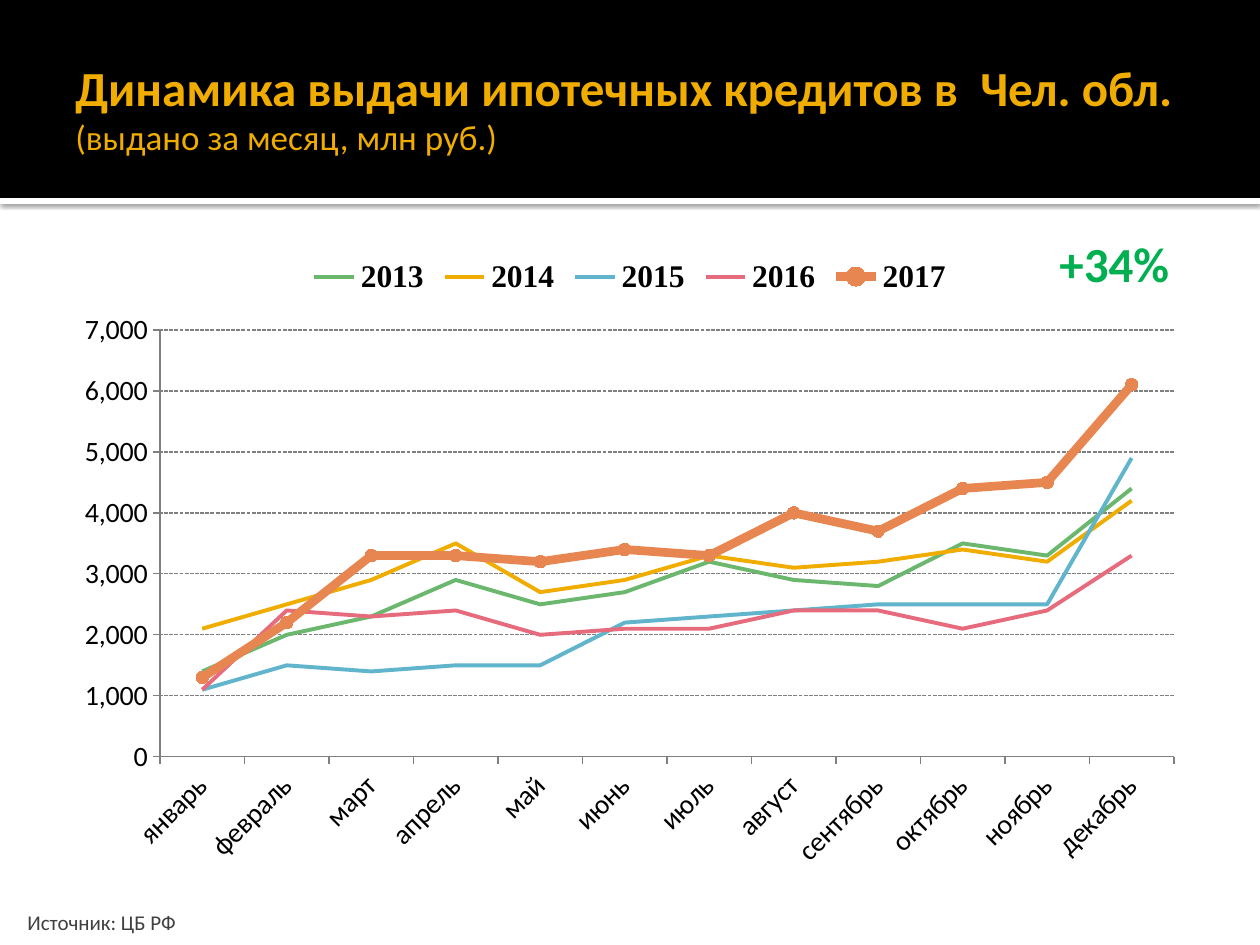
from lxml import etree
from pptx import Presentation
from pptx.chart.data import CategoryChartData
from pptx.dml.color import RGBColor
from pptx.enum.chart import XL_CHART_TYPE, XL_LEGEND_POSITION, XL_MARKER_STYLE, XL_TICK_MARK
from pptx.enum.dml import MSO_LINE
from pptx.enum.shapes import MSO_SHAPE
from pptx.enum.text import MSO_ANCHOR
from pptx.oxml import parse_xml
from pptx.oxml.ns import nsdecls, qn
from pptx.util import Emu, Pt

# Content
TITLE = "Динамика выдачи ипотечных кредитов в  Чел. обл."
SUBTITLE = "(выдано за месяц, млн руб.)"
SOURCE = "Источник: ЦБ РФ"
GROWTH = "+34%"
MONTHS = ["январь", "февраль", "март", "апрель", "май", "июнь", "июль",
          "август", "сентябрь", "октябрь", "ноябрь", "декабрь"]
LOANS = {
    "2013": [1400, 2000, 2300, 2900, 2500, 2700, 3200, 2900, 2800, 3500, 3300, 4400],
    "2014": [2100, 2500, 2900, 3500, 2700, 2900, 3300, 3100, 3200, 3400, 3200, 4200],
    "2015": [1100, 1500, 1400, 1500, 1500, 2200, 2300, 2400, 2500, 2500, 2500, 4900],
    "2016": [1100, 2400, 2300, 2400, 2000, 2100, 2100, 2400, 2400, 2100, 2400, 3300],
    "2017": [1300, 2200, 3300, 3300, 3200, 3400, 3300, 4000, 3700, 4400, 4500, 6100],
}
HIGHLIGHT = "2017"
COLORS = {
    "2013": "6BB76D", "2014": "F0AD00", "2015": "60B5CC", "2016": "E66C7D",
    "2017": "E88651", "title": "F0AD00", "source": "404040", "growth": "00B050",
    "black": "000000", "white": "FFFFFF", "axis": "808080",
}
FONT = "Calibri"
LEGEND_FONT = "Times New Roman"

# Places in px: left, top, width, height
BAND = (0, 0, 1260, 198)
STRIPE = (0, 198, 1260, 6)
TITLE_BOX = (63, 21, 1134, 173)
CHART_BOX = (63, 244, 1134, 638)
PLOT_BOX = (160, 330, 1014, 427)
SOURCE_BOX = (15, 903, 794, 38)
GROWTH_BOX = (1047, 227, 169, 72)


def px(n):
    return Emu(round(n * 914400 / 126))


def place(box):
    return [px(n) for n in box]


def color(key):
    return RGBColor.from_string(COLORS[key])


def style(font, size, key, bold=False, name=FONT):
    font.size, font.bold, font.name = Pt(size), bold, name
    font.color.rgb = color(key)


def add_bar(box, key):
    bar = slide.shapes.add_shape(MSO_SHAPE.RECTANGLE, *place(box))
    bar.shadow.inherit = False
    bar.fill.solid()
    bar.fill.fore_color.rgb = color(key)
    bar.line.fill.background()
    return bar


def add_text(box, text, formats, anchor=MSO_ANCHOR.TOP):
    frame = slide.shapes.add_textbox(*place(box)).text_frame
    frame.word_wrap = True
    frame.vertical_anchor = anchor
    frame.text = text
    for run, (size, key, bold) in zip(frame.paragraphs[0].runs, formats):
        style(run.font, size, key, bold)
    return frame


prs = Presentation()
prs.slide_width, prs.slide_height = px(1260), px(945)
slide = prs.slides.add_slide(prs.slide_layouts[6])

# Header band with a shadowed stripe under it
stripe = add_bar(STRIPE, "white")
effects = stripe._element.spPr.find(qn("a:effectLst"))
effects.append(parse_xml(
    f'<a:outerShdw {nsdecls("a")} blurRad="{Pt(2.5)}" dist="{Pt(0.8)}" dir="5400000">'
    f'<a:srgbClr val="{COLORS["black"]}"><a:alpha val="60000"/></a:srgbClr></a:outerShdw>'))
add_bar(BAND, "black")
heading = add_text(TITLE_BOX, f"{TITLE}\v{SUBTITLE}",
                   [(28, "title", True), (20, "title", False)], MSO_ANCHOR.MIDDLE)
heading.margin_right = px(6)

# Monthly loans chart
loans = CategoryChartData(number_format="#,##0")
loans.categories = MONTHS
for year, amounts in LOANS.items():
    loans.add_series(year, amounts)
chart = slide.shapes.add_chart(XL_CHART_TYPE.LINE_MARKERS, *place(CHART_BOX), loans).chart
chart.has_title = False
style(chart.font, 10, "black")
chart.has_legend = True
chart.legend.position = XL_LEGEND_POSITION.TOP
chart.legend.include_in_layout = False
style(chart.legend.font, 18, "black", True, LEGEND_FONT)
chart.plots[0].vary_by_categories = False

for series in chart.plots[0].series:
    strong = series.name == HIGHLIGHT
    series.smooth = False
    series.format.line.color.rgb = color(series.name)
    series.format.line.width = Pt(5 if strong else 2.25)
    marker = series.marker
    marker.style = XL_MARKER_STYLE.CIRCLE if strong else XL_MARKER_STYLE.NONE
    if strong:
        marker.size = 7
        marker.format.fill.solid()
        marker.format.fill.fore_color.rgb = color(series.name)
        marker.format.line.color.rgb = color(series.name)

# Axes
for axis in (chart.category_axis, chart.value_axis):
    axis.major_tick_mark = XL_TICK_MARK.OUTSIDE
    axis.minor_tick_mark = XL_TICK_MARK.NONE
    axis.format.line.color.rgb = color("axis")
    axis.format.line.width = Pt(0.75)
    style(axis.tick_labels.font, 16, "black")
chart.category_axis._element.find(qn("c:txPr")).find(qn("a:bodyPr")).set("rot", "-2700000")
amount_axis = chart.value_axis
amount_axis.minimum_scale, amount_axis.maximum_scale = 0, 7000
amount_axis.major_unit = 1000
amount_axis.tick_labels.number_format = "#,##0"
amount_axis.tick_labels.number_format_is_linked = False
grid = amount_axis.major_gridlines.format.line
grid.color.rgb = color("axis")
grid.width = Pt(0.75)
grid.dash_style = MSO_LINE.SQUARE_DOT

# Fixed inner plot area, as fractions of the chart
plot_area = chart._chartSpace.chart.plotArea
for old in plot_area.findall(qn("c:layout")):
    plot_area.remove(old)
layout = etree.Element(qn("c:layout"))
manual = etree.SubElement(layout, qn("c:manualLayout"))
left, top, width, height = CHART_BOX
settings = {
    "layoutTarget": "inner", "xMode": "edge", "yMode": "edge",
    "x": (PLOT_BOX[0] - left) / width, "y": (PLOT_BOX[1] - top) / height,
    "w": PLOT_BOX[2] / width, "h": PLOT_BOX[3] / height,
}
for tag, value in settings.items():
    etree.SubElement(manual, qn(f"c:{tag}")).set("val", str(value))
plot_area.insert(0, layout)

# Source and growth notes
add_text(SOURCE_BOX, SOURCE, [(12, "source", False)])
add_text(GROWTH_BOX, GROWTH, [(28, "growth", True)])

prs.save("out.pptx")
